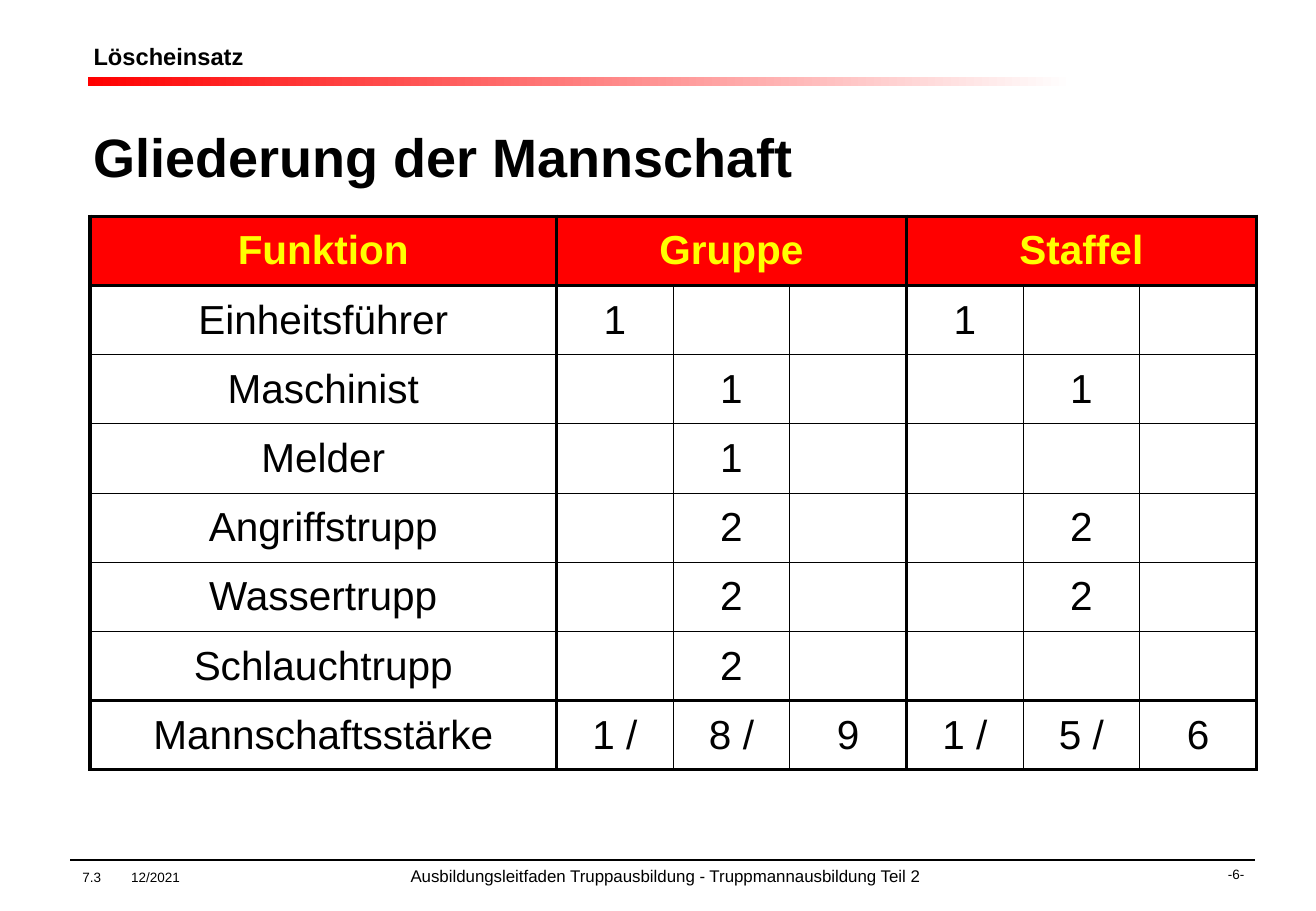
import pptx
import pptx.util
import pptx.dml.color
import pptx.enum.shapes
import pptx.enum.text
import pptx.oxml
import pptx.oxml.ns
from pptx.util import Inches, Pt

ALIGN = pptx.enum.text.PP_ALIGN
MIDDLE = pptx.enum.text.MSO_ANCHOR.MIDDLE
BLACK, RED, YELLOW, WHITE = "000000", "FF0000", "FFFF00", "FFFFFF"
NAMESPACE = pptx.oxml.ns.nsdecls("a")

ROWS = [
    ["Funktion", "Gruppe", "", "", "Staffel", "", ""],
    ["Einheitsführer", "1", "", "", "1", "", ""],
    ["Maschinist", "", "1", "", "", "1", ""],
    ["Melder", "", "1", "", "", "", ""],
    ["Angriffstrupp", "", "2", "", "", "2", ""],
    ["Wassertrupp", "", "2", "", "", "2", ""],
    ["Schlauchtrupp", "", "2", "", "", "", ""],
    ["Mannschaftsstärke", "1 /", "8 /", "9", "1 /", "5 /", "6"],
]
COLUMN_WIDTHS = [3.84] + [0.96] * 6
ROW_HEIGHT = 0.57
THICK_ROW_EDGES = {0, 1, 7, 8}
THICK_COLUMN_EDGES = {0, 1, 4, 7}


def rgb(color):
    return pptx.dml.color.RGBColor.from_string(color)


def set_font(target, size, color=BLACK, bold=False):
    font = target.font
    font.name, font.size, font.bold = "Arial", Pt(size), bold
    font.color.rgb = rgb(color)


def fill_placeholder(placeholder, box, text, size):
    placeholder.left, placeholder.top, placeholder.width, placeholder.height = map(Inches, box)
    frame = placeholder.text_frame
    frame.text = text
    frame.vertical_anchor = MIDDLE
    frame.auto_size = pptx.enum.text.MSO_AUTO_SIZE.NONE
    paragraph = frame.paragraphs[0]
    paragraph.alignment = ALIGN.LEFT
    paragraph.space_before = Pt(0)
    properties = paragraph._p.get_or_add_pPr()
    properties.set("marL", "0")
    properties.set("indent", "0")
    properties.append(pptx.oxml.parse_xml(f"<a:buNone {NAMESPACE}/>"))
    set_font(paragraph, size, bold=True)


def add_text(slide, box, alignment):
    frame = slide.shapes.add_textbox(*map(Inches, box)).text_frame
    frame.word_wrap = True
    paragraph = frame.paragraphs[0]
    paragraph.alignment = alignment
    return paragraph


def add_tabs(paragraph, positions):
    stops = "".join(f'<a:tab pos="{Inches(p)}" algn="l"/>' for p in positions)
    paragraph._p.get_or_add_pPr().append(
        pptx.oxml.parse_xml(f"<a:tabLst {NAMESPACE}>{stops}</a:tabLst>"))


def set_borders(cell, row, column):
    # Header cells are framed heavily because they are merged
    edges = {
        "L": row == 0 or column in THICK_COLUMN_EDGES,
        "R": row == 0 or column + 1 in THICK_COLUMN_EDGES,
        "T": row in THICK_ROW_EDGES,
        "B": row + 1 in THICK_ROW_EDGES,
    }
    properties = cell._tc.get_or_add_tcPr()
    for index, (side, thick) in enumerate(edges.items()):
        width = Pt(2.25 if thick else 0.5)
        properties.insert(index, pptx.oxml.parse_xml(
            f'<a:ln{side} {NAMESPACE} w="{width}"><a:solidFill>'
            f'<a:srgbClr val="{BLACK}"/></a:solidFill></a:ln{side}>'))


def add_crew_table(slide):
    crew = slide.shapes.add_table(
        len(ROWS), len(COLUMN_WIDTHS), Inches(0.74), Inches(1.78),
        Inches(sum(COLUMN_WIDTHS)), Inches(ROW_HEIGHT * len(ROWS))).table
    crew.horz_banding = False
    for column, width in zip(crew.columns, COLUMN_WIDTHS):
        column.width = Inches(width)
    for r, texts in enumerate(ROWS):
        crew.rows[r].height = Inches(ROW_HEIGHT)
        header = r == 0
        for c, text in enumerate(texts):
            cell = crew.cell(r, c)
            cell.fill.solid()
            cell.fill.fore_color.rgb = rgb(RED if header else WHITE)
            cell.vertical_anchor = MIDDLE
            cell.margin_top = cell.margin_bottom = Inches(0.05)
            cell.text = text
            paragraph = cell.text_frame.paragraphs[0]
            paragraph.alignment = ALIGN.CENTER
            set_font(paragraph, 24, YELLOW if header else BLACK, header)
            set_borders(cell, r, c)
    for first in (1, 4):
        crew.cell(0, first).merge(crew.cell(0, first + 2))


def add_header_bar(slide):
    bar = slide.shapes.add_shape(
        pptx.enum.shapes.MSO_SHAPE.RECTANGLE,
        Inches(0.72), Inches(0.63), Inches(8.12), Inches(0.08))
    bar.shadow.inherit = False
    bar.line.fill.background()
    bar.fill.gradient()
    bar.fill.gradient_angle = 0
    for stop, color, position in zip(bar.fill.gradient_stops, (RED, WHITE), (0, 1)):
        stop.color.rgb = rgb(color)
        stop.position = position


def add_footer(slide):
    rule = slide.shapes.add_connector(
        pptx.enum.shapes.MSO_CONNECTOR.STRAIGHT,
        Inches(0.58), Inches(7.08), Inches(10.33), Inches(7.08))
    rule.line.color.rgb = rgb(BLACK)
    rule.line.width = Pt(0.75)
    rule._element.spPr.append(pptx.oxml.parse_xml(f"<a:effectLst {NAMESPACE}/>"))

    page_number = add_text(slide, (8.08, 7.08, 2.26, 0.18), ALIGN.RIGHT)
    page_number.text = "-6-"
    set_font(page_number, 8)

    source = add_text(slide, (0.58, 7.08, 7.19, 0.24), ALIGN.LEFT)
    add_tabs(source, (0.4, 2.7))
    for text, size in (
            ("7.3\t12/2021\t", 8),
            ("Ausbildungsleitfaden Truppausbildung - Truppmannausbildung Teil 2", 10)):
        run = source.add_run()
        run.text = text
        set_font(run, size)


def main():
    presentation = pptx.Presentation()
    presentation.slide_width = Inches(10.83)
    presentation.slide_height = Inches(7.5)
    slide = presentation.slides.add_slide(presentation.slide_layouts[1])

    # Header and heading
    add_header_bar(slide)
    fill_placeholder(slide.shapes.title, (0.67, 0.25, 5.25, 0.42), "Löscheinsatz", 14)
    fill_placeholder(slide.placeholders[1], (0.67, 0.94, 9.67, 0.68),
                     "Gliederung der Mannschaft", 32)

    # Crew table and footer
    add_crew_table(slide)
    add_footer(slide)
    presentation.save("out.pptx")


if __name__ == "__main__":
    main()
